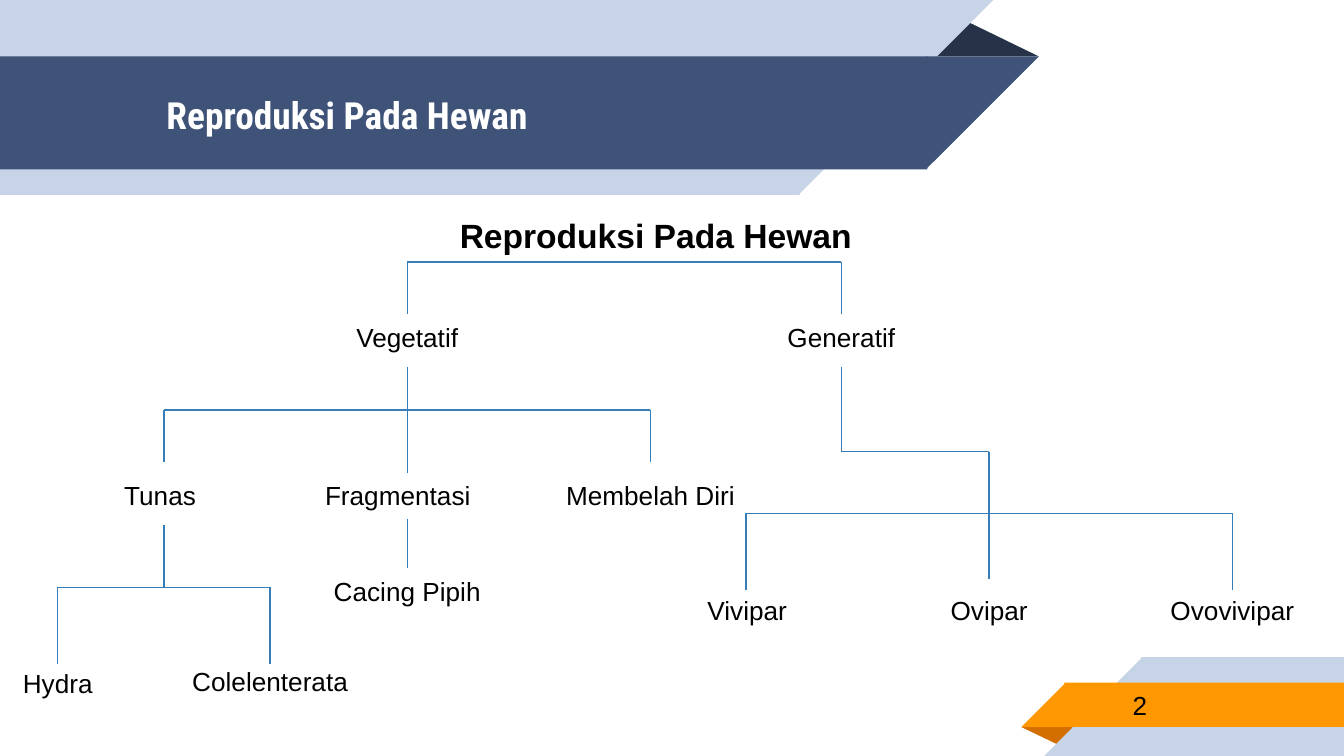
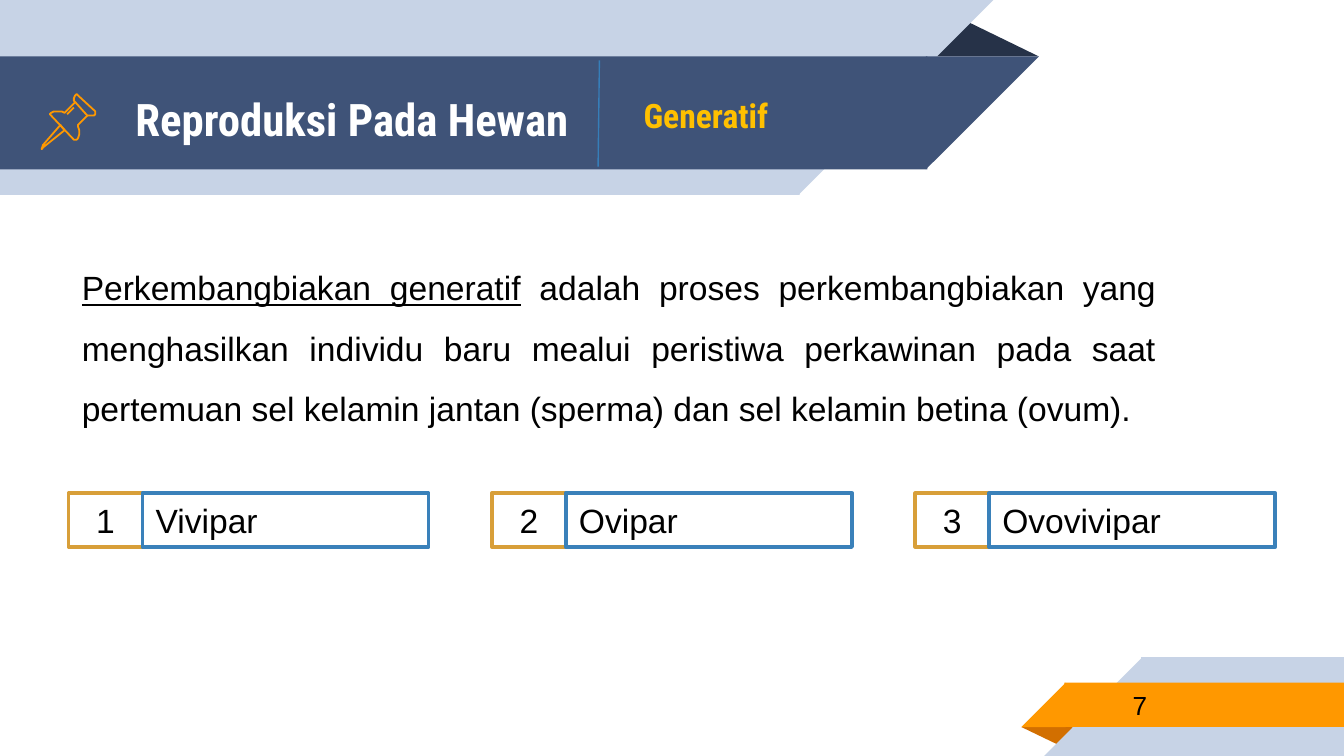
"""Builds two slides on animal reproduction: a concept tree and a definition."""
from dataclasses import dataclass

from lxml.etree import SubElement
from pptx import Presentation
from pptx.dml.color import RGBColor
from pptx.enum.shapes import MSO_CONNECTOR, MSO_SHAPE
from pptx.enum.text import MSO_ANCHOR, PP_ALIGN
from pptx.oxml.ns import qn
from pptx.util import Inches, Pt


@dataclass(frozen=True)
class Theme:
    pale: str = "C7D3E6"
    navy: str = "3F5378"
    night: str = "263248"
    orange: str = "FF9800"
    rust: str = "D26F00"
    gold: str = "FFC000"
    line: str = "367EB9"
    number_edge: str = "D89F39"
    name_edge: str = "3A81BA"
    white: str = "FFFFFF"
    black: str = "000000"
    heading: str = "Roboto Condensed"
    body: str = "Arial"
    small: int = 14
    medium: int = 18
    title: int = 20
    large: int = 24


T = Theme()
W = 10
H = W * 9 / 16
LEFT, CENTER, JUSTIFY = PP_ALIGN.LEFT, PP_ALIGN.CENTER, PP_ALIGN.JUSTIFY
TOP, MIDDLE = MSO_ANCHOR.TOP, MSO_ANCHOR.MIDDLE
RECT, CORNER, FOLD = MSO_SHAPE.RECTANGLE, MSO_SHAPE.RIGHT_TRIANGLE, MSO_SHAPE.ISOSCELES_TRIANGLE

TITLE = "Reproduksi Pada Hewan"
SUBTITLE = "Generatif"

# preset, box, colour, rotation, mirrored
BANDS = [
    (FOLD, (6.88, 0.14, 0.85, 0.28), T.night, 0, False),
    (RECT, (0, 0, 5.95, 1.45), T.pale, 180, True),
    (CORNER, (5.94, 0, 1.45, 1.45), T.pale, 180, True),
    (RECT, (0, 0.42, 6.9, 0.84), T.navy, 180, True),
    (CORNER, (6.89, 0.42, 0.84, 0.84), T.navy, 180, True),
    (FOLD, (7.6, 5.41, 0.43, 0.14), T.rust, 180, False),
    (RECT, (8.49, 4.89, W - 8.49, H - 4.89), T.pale, 0, True),
    (CORNER, (7.77, 4.89, 0.73, H - 4.89), T.pale, 0, True),
    (RECT, (7.92, 5.08, W - 7.92, 0.33), T.orange, 0, True),
    (CORNER, (7.6, 5.08, 0.33, 0.33), T.orange, 0, True),
]

NODE_H = 0.34
# label, centre x, top, width, alignment
NODES = [
    ("Vegetatif", 3.03, 2.34, 0.98, CENTER),
    ("Generatif", 6.26, 2.34, 1.12, CENTER),
    ("Tunas", 1.2, 3.52, 0.75, LEFT),
    ("Fragmentasi", 3.03, 3.52, 1.42, LEFT),
    ("Membelah Diri", 4.84, 3.52, 1.57, CENTER),
    ("Cacing Pipih", 3.03, 4.23, 1.42, CENTER),
    ("Hydra", 0.43, 4.92, 0.94, CENTER),
    ("Colelenterata", 2.01, 4.9, 1.42, CENTER),
    ("Vivipar", 5.56, 4.37, 0.8, CENTER),
    ("Ovipar", 7.36, 4.37, 1.42, CENTER),
    ("Ovovivipar", 9.17, 4.37, 1.57, CENTER),
]

# stem x, stem top, bar y, drops as (x, bottom)
BRANCHES = [
    (3.03, 1.95, 1.95, [(3.03, 2.34), (6.26, 2.34)]),
    (3.03, 2.73, 3.05, [(1.22, 3.44), (3.03, 3.52), (4.84, 3.44)]),
    (1.22, 3.91, 4.37, [(0.43, 4.94), (2.01, 4.94)]),
    (3.03, 3.86, 3.86, [(3.03, 4.23)]),
    (6.26, 2.73, 3.36, [(7.36, 3.82)]),
    (7.36, 3.82, 3.82, [(5.55, 4.39), (7.36, 4.31), (9.17, 4.39)]),
]

DEFINITION = [
    ("Perkembangbiakan generatif", True),
    (" adalah proses perkembangbiakan yang menghasilkan individu baru mealui "
     "peristiwa perkawinan pada saat pertemuan sel kelamin jantan (sperma) "
     "dan sel kelamin betina (ovum).", False),
]
KINDS = ["Vivipar", "Ovipar", "Ovovivipar"]
CARD_X, CARD_Y, CARD_H, CARD_PITCH = 0.51, 3.67, 0.4, 3.15
NUMBER_W, NAME_W = 0.55, 2.13

# pushpin outlines in hundredths of an inch, closed or open
PIN = [
    ([(45, 93), (32, 108), (31, 111), (33, 109), (48, 97)], True),
    ([(56, 76), (65, 86), (68, 86), (70, 86), (71, 85), (71, 83), (58, 71),
      (57, 70), (56, 71), (55, 73), (55, 75)], True),
    ([(56, 76), (48, 84), (46, 83), (43, 83), (40, 83), (38, 84), (37, 85),
      (38, 86), (55, 104), (57, 104), (58, 103), (59, 100), (59, 97),
      (58, 94), (58, 93), (65, 86)], False),
    ([(50, 85), (55, 80)], False),
]


def rgb(color):
    return RGBColor.from_string(color)


def write(sp, runs, size, color=T.black, font=T.body, bold=False, align=LEFT,
          anchor=TOP, inset=0.05, spacing=None, indent=0):
    tf = sp.text_frame
    tf.word_wrap = True
    tf.vertical_anchor = anchor
    tf.margin_left = tf.margin_right = Inches(0.1)
    tf.margin_top = tf.margin_bottom = Inches(inset)
    p = tf.paragraphs[0]
    p.alignment = align
    if spacing:
        p.line_spacing = spacing
    if indent:
        p._p.get_or_add_pPr().set("marL", str(Inches(indent)))
    for text, underlined in runs:
        r = p.add_run()
        r.text = text
        r.font.name, r.font.size, r.font.bold = font, Pt(size), bold
        r.font.color.rgb = rgb(color)
        if underlined:
            r.font.underline = True


def add_text(slide, box, text, size, **style):
    sp = slide.shapes.add_textbox(*map(Inches, box))
    write(sp, [(text, False)], size, **style)
    return sp


def add_block(slide, preset, box, fill, edge=None):
    sp = slide.shapes.add_shape(preset, *map(Inches, box))
    sp.shadow.inherit = False
    sp.fill.solid()
    sp.fill.fore_color.rgb = rgb(fill)
    if edge:
        sp.line.color.rgb, sp.line.width = rgb(edge), Pt(2)
    else:
        sp.line.fill.background()
    return sp


def add_line(slide, start, end, sites):
    cx = slide.shapes.add_connector(MSO_CONNECTOR.STRAIGHT, *map(Inches, start + end))
    cx.line.color.rgb, cx.line.width = rgb(T.line), Pt(0.75)
    SubElement(cx._element.spPr, qn("a:effectLst"))
    if start in sites:
        cx.begin_connect(*sites[start])
    if end in sites:
        cx.end_connect(*sites[end])


def add_frame(prs, number):
    slide = prs.slides.add_slide(prs.slide_layouts[6])
    for preset, box, color, rotation, mirrored in BANDS:
        sp = add_block(slide, preset, box, color)
        sp.rotation = rotation
        if preset == FOLD:
            sp.adjustments[0] = 0.324
        if mirrored:
            sp._element.spPr.find(qn("a:xfrm")).set("flipH", "1")
    add_text(slide, (8.33, 5.07, 1.63, 0.35), str(number), T.small, anchor=MIDDLE, inset=0.1)
    return slide


def add_heading(slide, box, text, size, color=T.white, anchor=MIDDLE, indent=0):
    add_text(slide, box, text, size, color=color, font=T.heading, bold=True,
             anchor=anchor, inset=0.1, indent=indent)


def build_tree(prs):
    slide = add_frame(prs, 2)
    add_heading(slide, (0.89, 0.43, 6.01, 0.84), TITLE, T.title, indent=0.25)
    add_text(slide, (2.95, 1.55, 3.86, 0.4), TITLE, T.medium, bold=True, align=CENTER)
    sites = {}
    for label, x, top, width, align in NODES:
        sp = add_text(slide, (x - width / 2, top, width, NODE_H), label, T.small, align=align)
        sites[x, top] = sp, 0
        sites[x, round(top + NODE_H, 2)] = sp, 2
    for x, top, bar, drops in BRANCHES:
        xs = [x] + [drop_x for drop_x, _ in drops]
        segments = [((x, top), (x, bar)), ((min(xs), bar), (max(xs), bar))]
        segments += [((drop_x, bar), (drop_x, bottom)) for drop_x, bottom in drops]
        for start, end in segments:
            if start != end:
                add_line(slide, start, end, sites)


def add_pin(slide):
    for points, closed in PIN:
        fb = slide.shapes.build_freeform(*points[0], scale=Inches(0.01))
        fb.add_line_segments(points[1:], close=closed)
        sp = fb.convert_to_shape()
        sp.shadow.inherit = False
        sp.fill.background()
        sp.line.color.rgb, sp.line.width = rgb(T.orange), Pt(0.96)


def build_definition(prs):
    slide = add_frame(prs, 7)
    add_heading(slide, (0.91, 0.46, 6.3, 0.84), TITLE, T.large)
    add_pin(slide)
    add_heading(slide, (4.69, 0.61, 2.2, 0.63), SUBTITLE, T.medium, T.gold, TOP)
    add_line(slide, (4.46, 0.45), (4.45, 1.24), {})
    for i, kind in enumerate(KINDS):
        x = CARD_X + i * CARD_PITCH
        sp = add_block(slide, RECT, (x, CARD_Y, NUMBER_W, CARD_H), T.white, T.number_edge)
        write(sp, [(str(i + 1), False)], T.medium, align=CENTER, anchor=MIDDLE)
        sp = add_block(slide, RECT, (x + NUMBER_W, CARD_Y, NAME_W, CARD_H), T.white, T.name_edge)
        write(sp, [(kind, False)], T.medium, anchor=MIDDLE)
    sp = add_block(slide, RECT, (CARD_X, 1.79, 8.19, 1.41), T.white)
    write(sp, DEFINITION, T.medium, align=JUSTIFY, spacing=1.5)


def main():
    prs = Presentation()
    prs.slide_width, prs.slide_height = Inches(W), Inches(H)
    build_tree(prs)
    build_definition(prs)
    prs.save("out.pptx")


if __name__ == "__main__":
    main()
